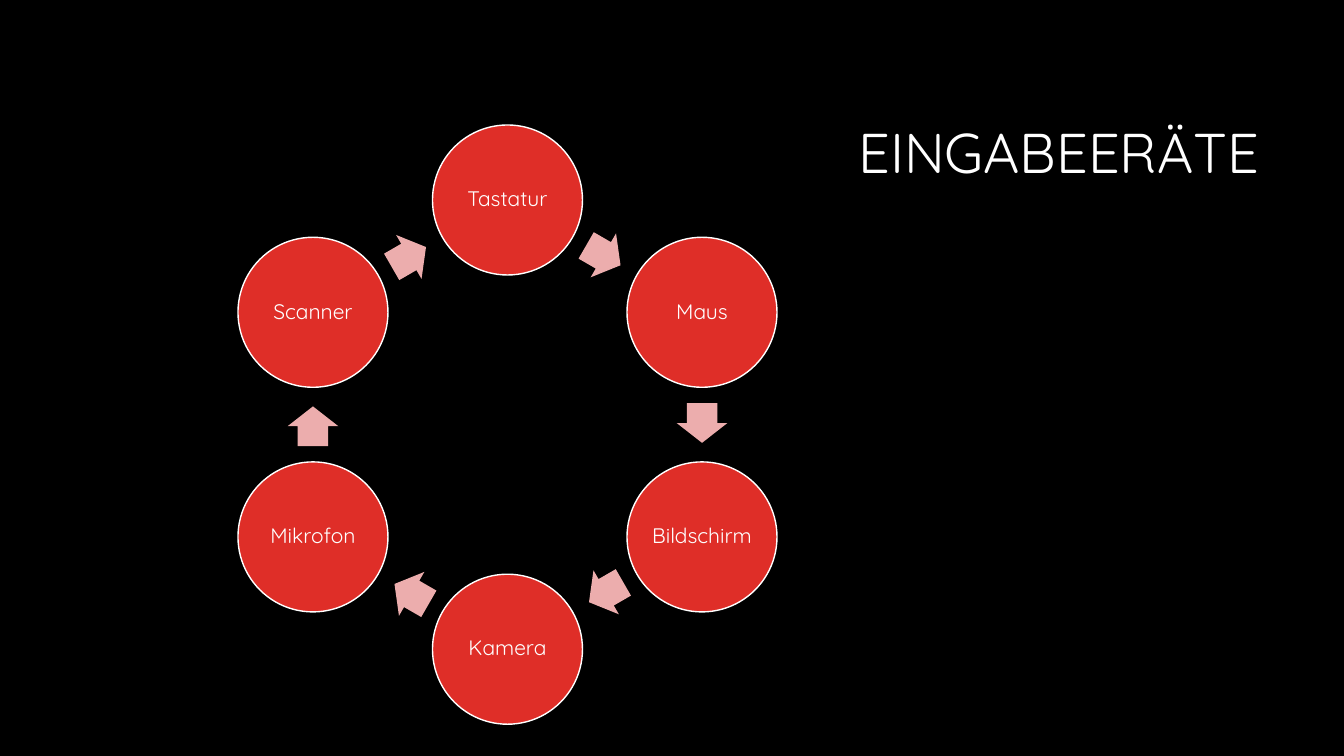
import math
from dataclasses import dataclass
from pptx import Presentation
from pptx import util as u
from pptx.dml import color
from pptx.enum import shapes, text


@dataclass(frozen=True)
class Theme:
    font: str = "Quicksand"
    background: str = "000000"
    ink: str = "FFFFFF"
    circle: str = "DF2E28"
    arrow: str = "ECADAD"
    title_size: float = 40
    label_size: float = 15
    outline: float = 1


@dataclass(frozen=True)
class Box:
    """A region of the slide, in centimetres."""
    left: float
    top: float
    width: float
    height: float

    def lengths(self):
        return [u.Cm(n) for n in (self.left, self.top, self.width, self.height)]


THEME = Theme()
DEVICES = ["Tastatur", "Maus", "Bildschirm", "Kamera", "Mikrofon", "Scanner"]


def rgb(value):
    return color.RGBColor.from_string(value)


def write(frame, words, size, align):
    frame.word_wrap = True
    frame.vertical_anchor = text.MSO_ANCHOR.MIDDLE
    frame.text = words
    para = frame.paragraphs[0]
    para.alignment = align
    para.line_spacing = 0.9
    font = para.runs[0].font
    font.name = THEME.font
    font.size = u.Pt(size)
    font.color.rgb = rgb(THEME.ink)


def add_title(slide, box, words):
    title = slide.shapes.add_textbox(*box.lengths())
    write(title.text_frame, words, THEME.title_size, text.PP_ALIGN.RIGHT)


def add_filled(slide, kind, center, width, height, fill):
    """Place a preset shape by its centre point."""
    x, y = center
    box = Box(x - width / 2, y - height / 2, width, height)
    shape = slide.shapes.add_shape(kind, *box.lengths())
    shape.shadow.inherit = False
    shape.fill.solid()
    shape.fill.fore_color.rgb = rgb(fill)
    return shape


def add_circle(slide, center, diameter, label):
    circle = add_filled(slide, shapes.MSO_SHAPE.OVAL, center, diameter, diameter,
                        THEME.circle)
    circle.line.color.rgb = rgb(THEME.ink)
    circle.line.width = u.Pt(THEME.outline)
    frame = circle.text_frame
    frame.margin_left = frame.margin_right = u.Cm(0.05)
    frame.margin_top = frame.margin_bottom = u.Cm(0.05)
    write(frame, label, THEME.label_size, text.PP_ALIGN.CENTER)


def add_arrow(slide, start, end):
    """Point an arrow from one circle centre to the next, just before halfway."""
    setback = 0.04
    angle = math.atan2(end[1] - start[1], end[0] - start[0])
    center = ((start[0] + end[0]) / 2 - setback * math.cos(angle),
              (start[1] + end[1]) / 2 - setback * math.sin(angle))
    arrow = add_filled(slide, shapes.MSO_SHAPE.RIGHT_ARROW, center, 1, 1.28,
                       THEME.arrow)
    arrow.adjustments[0] = 0.6
    arrow.adjustments[1] = 0.5
    arrow.line.fill.background()
    arrow.rotation = round(math.degrees(angle)) % 360


def add_cycle(slide, box, labels, diameter=3.78):
    """Spread circles clockwise from the top, linked by arrows."""
    radius = (box.height - diameter) / 2
    middle_x = box.left + box.width / 2
    middle_y = box.top + box.height / 2
    turns = [math.tau * i / len(labels) for i in range(len(labels))]
    centers = [(middle_x + radius * math.sin(turn),
                middle_y - radius * math.cos(turn)) for turn in turns]
    for label, center, following in zip(labels, centers, centers[1:] + centers[:1]):
        add_circle(slide, center, diameter, label)
        add_arrow(slide, center, following)


def main():
    deck = Presentation()
    deck.slide_width, deck.slide_height = u.Cm(33.87), u.Cm(19.05)
    slide = deck.slides.add_slide(deck.slide_layouts[6])
    slide.background.fill.solid()
    slide.background.fill.fore_color.rgb = rgb(THEME.background)
    add_title(slide, Box(8.05, 2.13, 23.93, 3.58), "EINGABEERÄTE")
    add_cycle(slide, Box(5.99, 3.15, 13.6, 15.1), DEVICES)
    deck.save("out.pptx")


if __name__ == "__main__":
    main()
